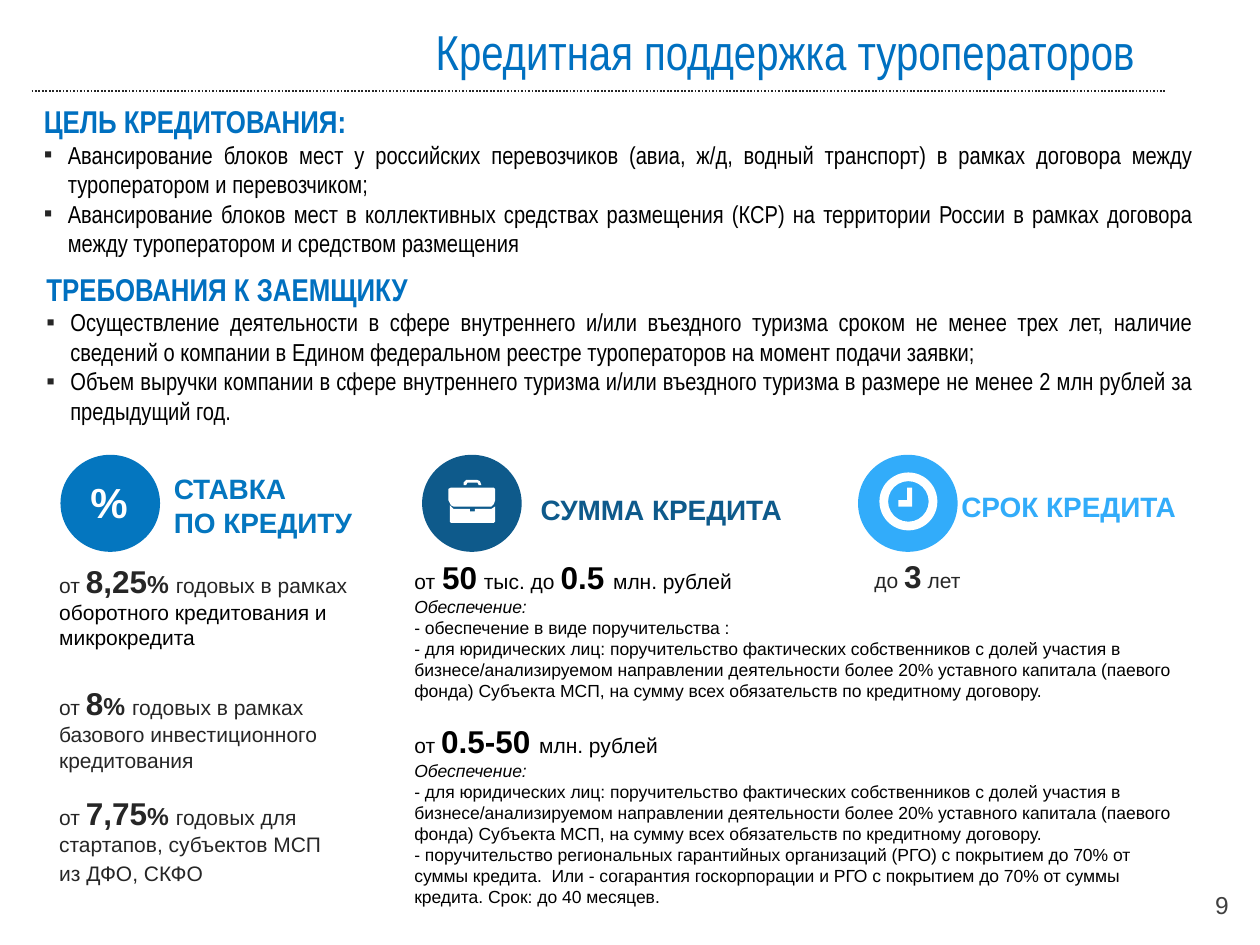
from lxml.etree import SubElement
from pptx import Presentation
from pptx.dml.color import RGBColor
from pptx.enum.dml import MSO_LINE
from pptx.enum.shapes import MSO_CONNECTOR, MSO_SHAPE as Shape
from pptx.enum.text import MSO_ANCHOR as Anchor, MSO_AUTO_SIZE as Fit, PP_ALIGN as Align
from pptx.oxml.ns import qn
from pptx.util import Pt

PX = 9144  # one px is a hundredth of an inch
BLUE = RGBColor(0x00, 0x70, 0xC0)
RATE_BLUE = RGBColor(0x04, 0x76, 0xBF)
DEEP_BLUE = RGBColor(0x0E, 0x5A, 0x8B)
SKY = RGBColor(0x32, 0xAC, 0xFA)
INK = RGBColor(0x26, 0x26, 0x26)
GREY = RGBColor(0x40, 0x40, 0x40)
BLACK = RGBColor(0, 0, 0)
WHITE = RGBColor(255, 255, 255)

SANS, NARROW = "Arial", "Arial Narrow"
PLAIN_INSETS, LABEL_INSETS, FIGURE_INSETS = (10, 5, 10, 5), (0, 0, 0, 0), (0, 0, 10, 5)
DISC_W, DISC_H = 79, 77

OWNERS_SURETY = ("- для юридических лиц: поручительство фактических собственников с долей участия в "
                 "бизнесе/анализируемом направлении деятельности более 20% уставного капитала (паевого "
                 "фонда) Субъекта МСП, на сумму всех обязательств по кредитному договору.")


def px(*lengths):
    return [round(length * PX) for length in lengths]


def fmt(size, color=BLACK, bold=False, italic=False, name=SANS):
    return dict(size=Pt(size), color=color, bold=bold, italic=italic, name=name)


def add_text(page, at, insets=PLAIN_INSETS, wrap=True, anchor=Anchor.TOP, grow=True):
    frame = page.shapes.add_textbox(*px(*at)).text_frame
    sides = ("margin_left", "margin_top", "margin_right", "margin_bottom")
    settings = dict(zip(sides, px(*insets)), word_wrap=wrap, vertical_anchor=anchor,
                    auto_size=Fit.SHAPE_TO_FIT_TEXT if grow else Fit.NONE)
    for key, value in settings.items():
        setattr(frame, key, value)
    return frame


def add_para(frame, *spans, align=Align.LEFT, before=0, bullet=False):
    """Add a paragraph of (text, format) spans, filling the empty first one."""
    first = frame.paragraphs[0]
    para = frame.add_paragraph() if first.runs else first
    para.alignment = align
    if before:
        para.space_before = Pt(before)
    if bullet:
        add_bullet(para)
    for text, style in spans:
        span = para.add_run()
        span.text = text
        for key, value in style.items():
            if key == "color":
                span.font.color.rgb = value
            else:
                setattr(span.font, key, value)


def add_bullet(para):
    props = para._p.get_or_add_pPr()
    props.set("marL", str(19 * PX))
    props.set("indent", str(-19 * PX))
    SubElement(SubElement(props, qn("a:buClr")), qn("a:srgbClr"), val=str(INK))
    SubElement(props, qn("a:buFont"), typeface=SANS)
    SubElement(props, qn("a:buChar"), char="▪")


def paint(shape, color):
    shape.shadow.inherit = False
    shape.fill.solid()
    shape.fill.fore_color.rgb = color
    shape.line.fill.background()


def add_outline(page, left, top, points):
    (x, y), *rest = [(left + dx, top + dy) for dx, dy in points]
    builder = page.shapes.build_freeform(x, y, scale=PX)
    builder.add_line_segments(rest, close=True)
    paint(builder.convert_to_shape(), WHITE)


def add_disc(page, left, top, color):
    paint(page.shapes.add_shape(Shape.OVAL, *px(left, top, DISC_W, DISC_H)), color)


def add_label(page, at, color, *lines, wrap=False):
    frame = add_text(page, at, LABEL_INSETS, wrap, Anchor.MIDDLE)
    for line in lines:
        add_para(frame, (line, fmt(16, color, bold=True)))


def header(page, left, top, width):
    # Title above a dotted rule
    frame = add_text(page, (left - 46, top, width + 31, 87), grow=False)
    add_para(frame, ("Кредитная поддержка туроператоров", fmt(28, BLUE, name=NARROW)),
             align=Align.RIGHT)
    rule = page.shapes.add_connector(MSO_CONNECTOR.STRAIGHT,
                                     *px(left, top + 60, left + width, top + 60))
    rule.line.color.rgb = INK
    rule.line.width = Pt(1)
    rule.line.dash_style = MSO_LINE.ROUND_DOT
    SubElement(rule._element.spPr, qn("a:effectLst"))


def bullet_section(page, box, heading, items):
    frame = add_text(page, box)
    add_para(frame, (heading, fmt(18, BLUE, bold=True, name=NARROW)))
    for item in items:
        add_para(frame, (item, fmt(14, name=NARROW)), align=Align.JUSTIFY, bullet=True)


def rate_column(page, left, top):
    # Percent badge and label
    add_disc(page, left + 1, top, RATE_BLUE)
    sign = add_text(page, (left + 15, top + 12, 50, 50), wrap=False)
    add_para(sign, ("%", fmt(24, WHITE, bold=True)))
    add_label(page, (left + 91, top + 13, 143, 54), RATE_BLUE, "СТАВКА", "ПО КРЕДИТУ")

    # Rates
    small = fmt(12, INK)
    rates = [
        (85, 245, 76, "8,25", [("годовых в рамках ", small),
                               ("оборотного кредитования и микрокредита", fmt(12))]),
        (182, 257, 76, "8", [("годовых в рамках базового инвестиционного кредитования", small)]),
        (269, 257, 80, "7,75", [("годовых для стартапов, субъектов МСП", small)]),
    ]
    for offset, width, height, figure, tail in rates:
        frame = add_text(page, (left, top + offset, width, height), FIGURE_INSETS)
        add_para(frame, ("от ", small), (figure, fmt(18, INK, bold=True)),
                 ("% ", fmt(14, INK, bold=True)), *tail)
    add_para(frame, ("из ДФО, СКФО", small), before=2.4)


def amount_column(page, left, top):
    # Briefcase badge and label
    add_disc(page, left + 16, top, DEEP_BLUE)
    case_left, case_top = left + 37, top + 20
    handle = [(12, 4), (12, 2), (14, 0), (23, 0), (25, 1), (26, 4),
              (24, 4), (23, 2), (15, 2), (14, 4)]
    lid = [(2, 6), (36, 6), (37, 7), (37, 16), (36, 19), (34, 21),
           (4, 21), (2, 20), (0, 16), (0, 7)]
    body = [(1, 20), (4, 23), (17, 23), (17, 25), (21, 25), (21, 23),
            (34, 23), (37, 21), (37, 33), (36, 34), (2, 34), (1, 33)]
    for points in (handle, lid, body):
        add_outline(page, case_left, case_top, points)
    add_label(page, (left + 110, top + 30, 232, 27), DEEP_BLUE, "СУММА КРЕДИТА", wrap=True)

    # Amounts with the security each one needs
    small, large, note = fmt(12), fmt(18, bold=True), fmt(10)
    amounts = [
        ([("от", small), (" ", fmt(14)), ("50", large), (" ", fmt(14)), ("тыс. до ", small),
          ("0.5 ", large)],
         ["- обеспечение в виде поручительства :", OWNERS_SURETY]),
        ([("от ", small), ("0.5-50 ", large)],
         [OWNERS_SURETY,
          "- поручительство региональных гарантийных организаций (РГО) с покрытием до 70% от "
          "суммы кредита.  Или - согарантия госкорпорации и РГО с покрытием до 70% от суммы "
          "кредита. Срок: до 40 месяцев."]),
    ]
    frame = add_text(page, (left, top + 77, 622, 289))
    for index, (spans, terms) in enumerate(amounts):
        add_para(frame, *spans, ("млн. рублей", small), before=12 * index)
        add_para(frame, ("Обеспечение:", fmt(10, italic=True)))
        for term in terms:
            add_para(frame, (term, note))


def term_column(page, left, top):
    # Clock badge and label
    add_disc(page, left, top, SKY)
    ring = page.shapes.add_shape(Shape.DONUT, *px(left + 17, top + 14, 46, 46))
    ring.adjustments[0] = 0.15
    paint(ring, WHITE)
    add_outline(page, left + 32, top + 26,
                [(7, 0), (11, 0), (11, 15), (0, 15), (0, 10), (7, 10)])
    add_label(page, (left + 82, top + 27, 174, 27), SKY, "СРОК КРЕДИТА")

    # Length of the loan
    small = fmt(12, INK)
    frame = add_text(page, (left + 13, top + 81, 192, 35), FIGURE_INSETS)
    add_para(frame, ("до ", small), ("3", fmt(18, INK, bold=True)), (" лет", small))


def page_number(page, box, number):
    frame = add_text(page, box, anchor=Anchor.MIDDLE, grow=False)
    add_para(frame, (number, fmt(14, GREY)), align=Align.RIGHT)


def main():
    deck = Presentation()
    deck.slide_width, deck.slide_height = px(1000, 750)
    page = deck.slides.add_slide(deck.slide_layouts[6])

    header(page, 25, 12, 900)
    bullet_section(page, (25, 76, 932, 135), "ЦЕЛЬ КРЕДИТОВАНИЯ:", [
        "Авансирование блоков мест у российских перевозчиков (авиа, ж/д, водный транспорт) "
        "в рамках договора между туроператором и перевозчиком;",
        "Авансирование блоков мест в коллективных средствах размещения (КСР) на территории "
        "России в рамках договора между туроператором и средством размещения",
    ])
    bullet_section(page, (27, 209, 930, 135), "ТРЕБОВАНИЯ К ЗАЕМЩИКУ", [
        "Осуществление деятельности в сфере внутреннего и/или въездного туризма сроком не менее "
        "трех лет, наличие сведений о компании в Едином федеральном реестре туроператоров "
        "на момент подачи заявки;",
        "Объем выручки компании в сфере внутреннего туризма и/или въездного туризма в размере "
        "не менее 2 млн рублей за предыдущий год.",
    ])
    rate_column(page, 47, 361)
    amount_column(page, 319, 361)
    term_column(page, 681, 361)
    page_number(page, (752, 698, 233, 40), "9")

    deck.save("out.pptx")


if __name__ == "__main__":
    main()
